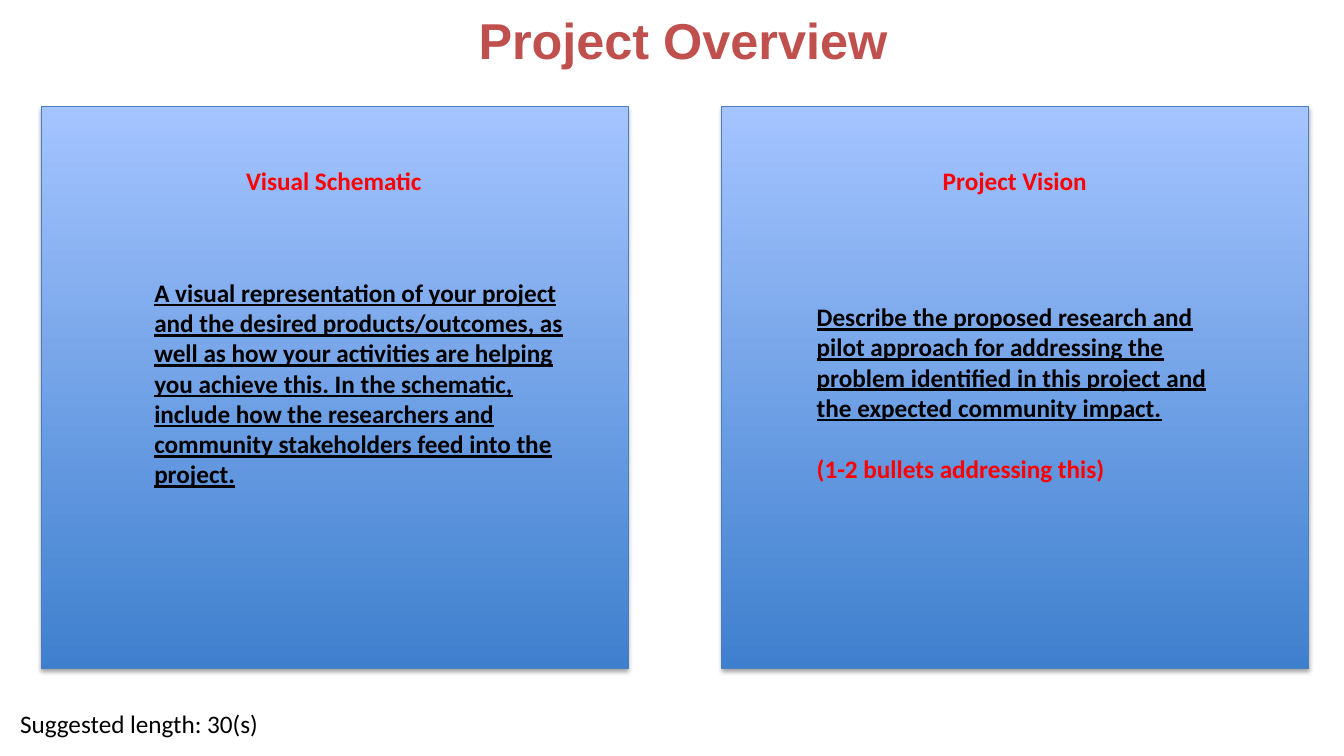
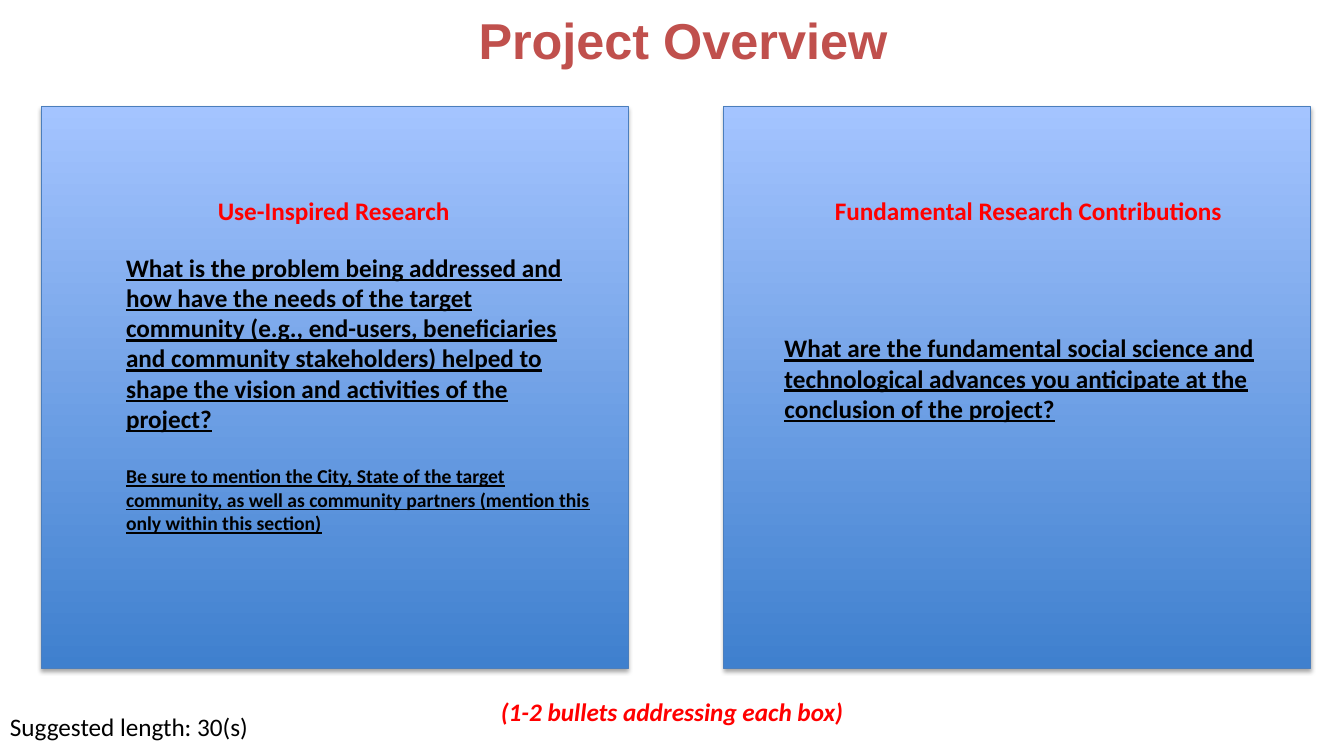
from lxml.etree import SubElement
from pptx import Presentation
from pptx.dml.color import RGBColor
from pptx.enum.shapes import MSO_SHAPE
from pptx.enum.text import MSO_ANCHOR, MSO_AUTO_SIZE, PP_ALIGN
from pptx.oxml import parse_xml
from pptx.oxml.ns import nsdecls, qn
from pptx.util import Inches, Pt

BLACK = RGBColor(0x00, 0x00, 0x00)
WHITE = RGBColor(0xFF, 0xFF, 0xFF)
RED = RGBColor(0xFF, 0x00, 0x00)
TITLE_RED = RGBColor(0xC0, 0x50, 0x4D)
PANEL_BOTTOM = RGBColor(0x3F, 0x80, 0xCE)
PANEL_TOP = RGBColor(0xA4, 0xC4, 0xFF)
PANEL_EDGE = RGBColor(0x4B, 0x7E, 0xBC)

COMPARISON_LAYOUT = 4
LEFT_PANEL = 0.41
LEFT_HEADING, LEFT_BODY, RIGHT_HEADING, RIGHT_BODY = 1, 2, 3, 4
SHADOW = (
    f'<a:effectLst {nsdecls("a")}><a:outerShdw blurRad="{Pt(3.1)}" dist="{Pt(1.8)}" '
    'dir="5400000" rotWithShape="0"><a:srgbClr val="000000"><a:alpha val="35000"/>'
    '</a:srgbClr></a:outerShdw></a:effectLst>'
)


class OverviewDeck:
    """Holds the deck style and the current two-panel slide."""

    def __init__(self):
        self.presentation = Presentation()
        self.presentation.slide_width = Inches(13.33)
        self.presentation.slide_height = Inches(7.5)
        self.slide = None

    def start_slide(self, title):
        layout = self.presentation.slide_layouts[COMPARISON_LAYOUT]
        self.slide = self.presentation.slides.add_slide(layout)
        heading = self.slide.shapes.title
        self.place(heading, 1.41, 0.11, 10.73, 0.57)
        frame = self.fill_text(heading, [title], MSO_ANCHOR.MIDDLE)
        self.style(frame.paragraphs[0], 36, TITLE_RED, "Arial", bold=True)
        frame.paragraphs[0].alignment = PP_ALIGN.CENTER

    def place(self, shape, left, top, width, height):
        shape.left, shape.top = Inches(left), Inches(top)
        shape.width, shape.height = Inches(width), Inches(height)

    def fill_text(self, shape, lines, anchor=MSO_ANCHOR.TOP, wrap=True):
        frame = shape.text_frame
        frame.text = "\n".join(lines)
        frame.auto_size = MSO_AUTO_SIZE.NONE
        frame.vertical_anchor = anchor
        frame.word_wrap = wrap
        return frame

    def style(self, paragraph, size, color, font="Calibri", bold=False,
              italic=False, underline=False):
        paragraph.space_before = Pt(0)
        for run in paragraph.runs:
            run.font.name, run.font.size = font, Pt(size)
            run.font.color.rgb = color
            run.font.bold, run.font.italic = bold, italic
            run.font.underline = underline

    def indent(self, paragraph):
        properties = paragraph._p.get_or_add_pPr()
        properties.set("marL", str(Inches(0.5)))
        properties.set("indent", "0")
        SubElement(properties, qn("a:buNone"))

    def panel(self, left):
        panel = self.slide.shapes.add_shape(
            MSO_SHAPE.RECTANGLE, Inches(left), Inches(1.06), Inches(5.82), Inches(5.57))
        panel.fill.gradient()
        panel.fill.gradient_angle = 90
        for stop, color in zip(panel.fill.gradient_stops, (PANEL_BOTTOM, PANEL_TOP)):
            stop.color.rgb = color
        panel.line.color.rgb = PANEL_EDGE
        panel.line.width = Pt(0.75)
        panel.element.spPr.append(parse_xml(SHADOW))
        self.slide.shapes.element.insert(2, panel.element)

    def heading(self, slot, text, left, top, width):
        heading = self.slide.placeholders[slot]
        self.place(heading, left, top, width, 0.4)
        frame = self.fill_text(heading, [text], wrap=False)
        self.style(frame.paragraphs[0], 18, RED, bold=True)

    def body(self, slot, prompt, box, note=None, note_size=18, note_color=BLACK,
             note_underline=True):
        body = self.slide.placeholders[slot]
        self.place(body, *box)
        frame = self.fill_text(body, [prompt, note] if note else [prompt])
        self.style(frame.paragraphs[0], 18, BLACK, bold=True, underline=True)
        for paragraph in frame.paragraphs[1:]:
            self.style(paragraph, note_size, note_color, bold=True,
                       underline=note_underline)
            paragraph.space_before = Pt(22)
        for paragraph in frame.paragraphs:
            self.indent(paragraph)

    def caption(self, text, left, top, width):
        caption = self.slide.shapes.add_textbox(
            Inches(left), Inches(top), Inches(width), Inches(0.4))
        frame = self.fill_text(caption, [text], wrap=False)
        self.style(frame.paragraphs[0], 18, BLACK)

    def reminder(self, text):
        reminder = self.slide.shapes.add_textbox(
            Inches(4.37), Inches(6.86), Inches(4.13), Inches(0.4))
        reminder.fill.solid()
        reminder.fill.fore_color.rgb = WHITE
        frame = self.fill_text(reminder, [text])
        self.style(frame.paragraphs[0], 18, RED, bold=True, italic=True)
        self.indent(frame.paragraphs[0])


def main():
    deck = OverviewDeck()
    title, length = "Project Overview", "Suggested length: 30(s)"

    deck.start_slide(title)
    for left in (LEFT_PANEL, 7.16):
        deck.panel(left)
    deck.heading(LEFT_HEADING, "Visual Schematic", 2.34, 1.59, 1.96)
    deck.body(
        LEFT_BODY,
        "A visual representation of your project and the desired products/outcomes, "
        "as well as how your activities are helping you achieve this. In the schematic, "
        "include how the researchers and community stakeholders feed into the project.",
        (0.93, 2.7, 4.78, 2.22))
    deck.heading(RIGHT_HEADING, "Project Vision", 9.25, 1.59, 1.64)
    deck.body(
        RIGHT_BODY,
        "Describe the proposed research and pilot approach for addressing the problem "
        "identified in this project and the expected community impact.",
        (7.5, 2.94, 4.65, 1.92),
        note="(1-2 bullets addressing this)", note_color=RED, note_underline=False)
    deck.caption(length, 0.1, 6.98, 2.59)

    deck.start_slide(title)
    for left in (LEFT_PANEL, 7.18):
        deck.panel(left)
    deck.heading(LEFT_HEADING, "Use-Inspired Research", 2.06, 1.89, 2.51)
    deck.body(
        LEFT_BODY,
        "What is the problem being addressed and how have the needs of the target "
        "community (e.g., end-users, beneficiaries and community stakeholders) helped "
        "to shape the vision and activities of the project?",
        (0.65, 2.45, 5.33, 2.93),
        note="Be sure to mention the City, State of the target community, as well as "
             "community partners (mention this only within this section)",
        note_size=14)
    deck.heading(RIGHT_HEADING, "Fundamental Research Contributions", 8.18, 1.89, 4.04)
    deck.body(
        RIGHT_BODY,
        "What are the fundamental social science and technological advances you "
        "anticipate at the conclusion of the project?",
        (7.18, 3.25, 5.73, 1.01))
    deck.caption(length, 0, 7.01, 2.59)
    deck.reminder("(1-2 bullets addressing each box)")

    deck.presentation.save("out.pptx")


if __name__ == "__main__":
    main()
